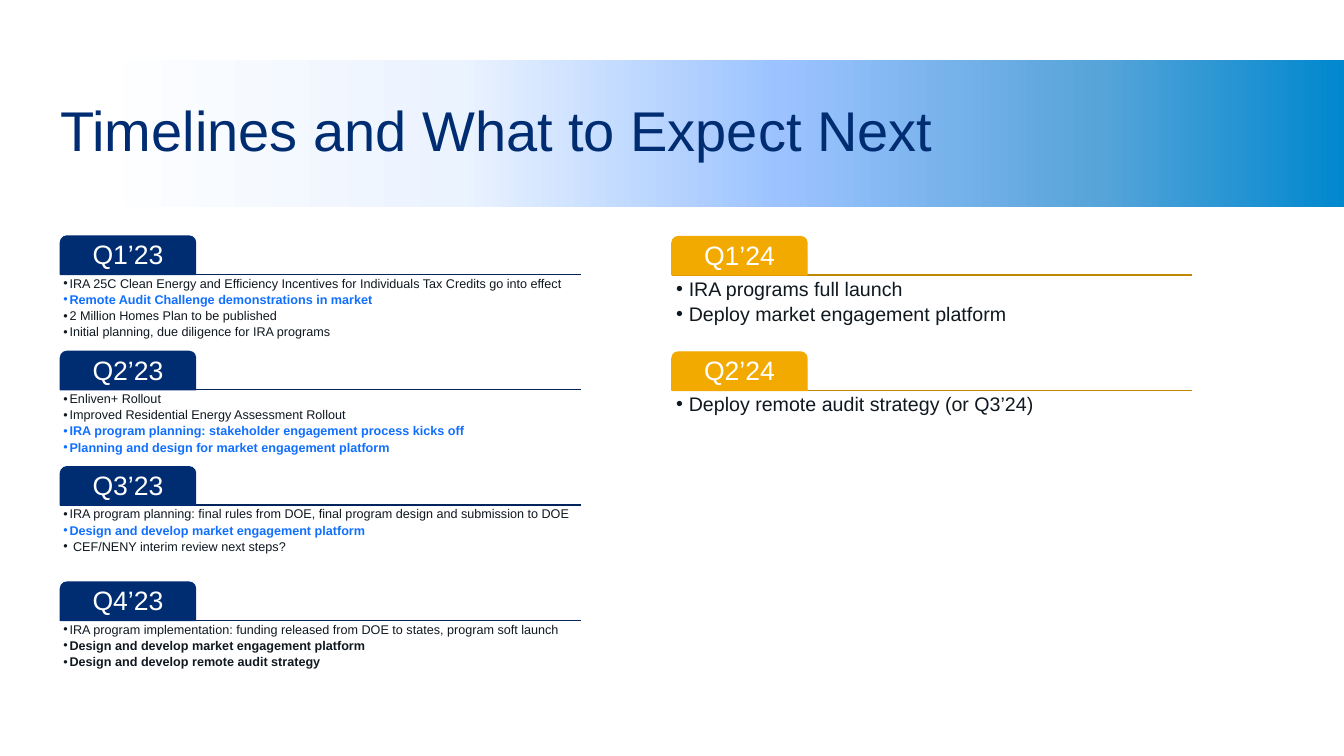
from lxml import etree
from pptx import Presentation
from pptx.dml.color import RGBColor
from pptx.enum import shapes, text
from pptx.oxml import ns
from pptx.util import Pt

FONT = "Arial"
COLORS = {
    "navy": "002D72", "navy_rule": "00245B",
    "gold": "F2A900", "gold_rule": "C28700",
    "ink": "101820", "accent": "116FFF", "white": "FFFFFF",
}
BAND_STOPS = [(2, "FFFFFF"), (31, "EBF3FF"), (56, "9CC3FF"),
              (81, "56A4D9"), (100, "0088CE")]
ROW_PITCH, TAB_WIDTH, TAB_HEIGHT = 82.4, 96.5, 27.4
COLUMN_WIDTH, LIST_HEIGHT = 371.5, 54

# Each list item: wording, colour, bold
YEAR_2023 = [
    ("Q1’23", [
        ("IRA 25C Clean Energy and Efficiency Incentives for Individuals "
         "Tax Credits go into effect", "ink", False),
        ("Remote Audit Challenge demonstrations in market", "accent", True),
        ("2 Million Homes Plan to be published", "ink", False),
        ("Initial planning, due diligence for IRA programs", "ink", False)]),
    ("Q2’23", [
        ("Enliven+ Rollout", "ink", False),
        ("Improved Residential Energy Assessment Rollout", "ink", False),
        ("IRA program planning: stakeholder engagement process kicks off",
         "accent", True),
        ("Planning and design for market engagement platform",
         "accent", True)]),
    ("Q3’23", [
        ("IRA program planning: final rules from DOE, final program design "
         "and submission to DOE", "ink", False),
        ("Design and develop market engagement platform", "accent", True),
        (" CEF/NENY interim review next steps?", "ink", False)]),
    ("Q4’23", [
        ("IRA program implementation: funding released from DOE to states, "
         "program soft launch", "ink", False),
        ("Design and develop market engagement platform", "ink", True),
        ("Design and develop remote audit strategy", "ink", True)]),
]
YEAR_2024 = [
    ("Q1’24", [
        ("IRA programs full launch", "ink", False),
        ("Deploy market engagement platform", "ink", False)]),
    ("Q2’24", [("Deploy remote audit strategy (or Q3’24)", "ink", False)]),
]


def rgb(name):
    return RGBColor.from_string(COLORS[name])


def place(item, left, top, width, height):
    item.left, item.top = Pt(left), Pt(top)
    item.width, item.height = Pt(width), Pt(height)


def set_frame(frame, inset, anchor):
    frame.word_wrap = True
    frame.auto_size = text.MSO_AUTO_SIZE.NONE
    frame.vertical_anchor = anchor
    frame.margin_left = frame.margin_right = Pt(inset)
    frame.margin_top = frame.margin_bottom = Pt(inset)


def add_run(paragraph, words, size, color, bold=False):
    paragraph.line_spacing = 0.9
    paragraph.space_before = Pt(0)
    run = paragraph.add_run()
    run.text = words
    run.font.name, run.font.size, run.font.bold = FONT, Pt(size), bold
    run.font.color.rgb = rgb(color)


def add_title(slide, words):
    title = slide.shapes.title
    place(title, 43.2, 43.2, 874, 104.4)
    set_frame(title.text_frame, 0, text.MSO_ANCHOR.MIDDLE)
    heading = title.text_frame.paragraphs[0]
    heading.alignment = text.PP_ALIGN.LEFT
    add_run(heading, words, 40, "navy")


def add_band(slide):
    band = slide.shapes.add_shape(shapes.MSO_SHAPE.RECTANGLE,
                                  Pt(43.2), Pt(43.2), Pt(916.8), Pt(104.4))
    band.shadow.inherit = False
    band.line.fill.background()
    band.fill.gradient()
    band.fill.gradient_angle = 0
    stops = band.element.spPr.find(".//" + ns.qn("a:gsLst"))
    for stop in list(stops):
        stops.remove(stop)
    for percent, color in BAND_STOPS:
        stop = etree.SubElement(stops, ns.qn("a:gs"), pos=str(percent * 1000))
        etree.SubElement(stop, ns.qn("a:srgbClr"), val=color)
    # The band lies behind the title
    slide.shapes.title.element.addprevious(band.element)


def add_rule(slide, left, top, color):
    rule = slide.shapes.add_connector(
        shapes.MSO_CONNECTOR.STRAIGHT,
        Pt(left), Pt(top), Pt(left + COLUMN_WIDTH), Pt(top))
    rule.line.color.rgb = rgb(color)
    rule.line.width = Pt(1)
    etree.SubElement(rule.element.spPr, ns.qn("a:effectLst"))


def add_tab(slide, left, top, quarter, color):
    tab = slide.shapes.add_shape(
        shapes.MSO_SHAPE.ROUND_2_SAME_RECTANGLE,
        Pt(left), Pt(top), Pt(TAB_WIDTH), Pt(TAB_HEIGHT))
    tab.adjustments[0], tab.adjustments[1] = 0.167, 0
    tab.shadow.inherit = False
    tab.fill.solid()
    tab.fill.fore_color.rgb = tab.line.color.rgb = rgb(color)
    tab.line.width = Pt(1)
    set_frame(tab.text_frame, 2.7, text.MSO_ANCHOR.MIDDLE)
    label = tab.text_frame.paragraphs[0]
    label.alignment = text.PP_ALIGN.CENTER
    add_run(label, quarter, 19, "white")


def add_list(milestones, left, top, items, size, inset, indent):
    place(milestones, left, top, COLUMN_WIDTH, LIST_HEIGHT)
    frame = milestones.text_frame
    set_frame(frame, inset, text.MSO_ANCHOR.TOP)
    for index, (words, color, bold) in enumerate(items):
        milestone = frame.add_paragraph() if index else frame.paragraphs[0]
        milestone.alignment = text.PP_ALIGN.LEFT
        milestone.space_after = Pt(size * 0.2)
        add_run(milestone, words, size, color, bold)
        props = milestone._p.get_or_add_pPr()
        props.set("marL", str(Pt(indent)))
        props.set("indent", str(-Pt(indent)))
        etree.SubElement(props, ns.qn("a:buFont"), typeface=FONT)
        etree.SubElement(props, ns.qn("a:buChar"), char="•")


def add_year(slide, bodies, left, top, quarters, color, **list_style):
    for row, (quarter, items) in enumerate(quarters):
        tab_top = top + row * ROW_PITCH
        rule_top = tab_top + TAB_HEIGHT
        add_rule(slide, left, rule_top, color + "_rule")
        add_tab(slide, left, tab_top, quarter, color)
        # Text boxes take over once the layout's bodies are used up
        milestones = next(bodies, None) or slide.shapes.add_textbox(0, 0, 0, 0)
        add_list(milestones, left, rule_top, items, **list_style)


def main():
    deck = Presentation()
    deck.slide_width, deck.slide_height = Pt(960), Pt(540)
    comparison = deck.slide_layouts.get_by_name("Comparison")
    slide = deck.slides.add_slide(comparison)

    # Header
    add_title(slide, "Timelines and What to Expect Next")
    add_band(slide)

    # Quarters by year
    bodies = iter([body for body in slide.placeholders
                   if body.placeholder_format.idx > 0])
    add_year(slide, bodies, 43.2, 168.6, YEAR_2023, "navy",
             size=9, inset=2, indent=4.5)
    add_year(slide, bodies, 480, 169, YEAR_2024, "gold",
             size=14, inset=3, indent=9)

    deck.save("out.pptx")


if __name__ == "__main__":
    main()
